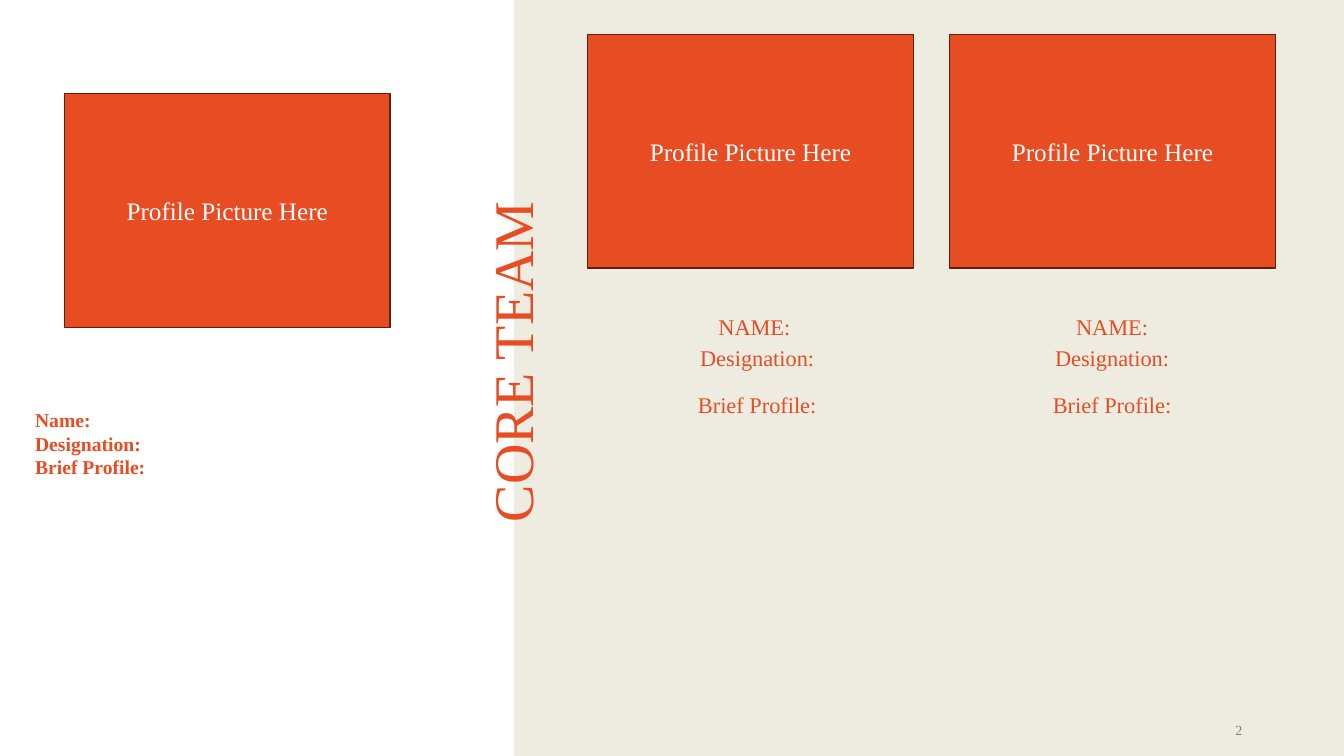
from dataclasses import dataclass

from pptx import Presentation
from pptx.dml.color import RGBColor as Rgb
from pptx.enum.shapes import MSO_SHAPE as Kind
from pptx.enum.text import MSO_ANCHOR as Anchor, PP_ALIGN as Align
from pptx.util import Pt

SCALE = 9144


@dataclass(frozen=True)
class Theme:
    font: str = "Times New Roman"
    accent: Rgb = Rgb(0xE8, 0x4C, 0x22)
    edge: Rgb = Rgb(0x61, 0x20, 0x0E)
    panel: Rgb = Rgb(0xEE, 0xEC, 0xE1)
    white: Rgb = Rgb(0xFF, 0xFF, 0xFF)
    gray: Rgb = Rgb(0x7F, 0x7F, 0x7F)
    title: int = 40
    photo: int = 18
    label: int = 16
    lead: int = 14
    number: int = 10


THEME = Theme()


def px(*sizes):
    return [size * SCALE for size in sizes]


def write(shape, lines, size, color, align=Align.CENTER,
          anchor=Anchor.MIDDLE, bold=False, space=1.0):
    frame = shape.text_frame
    frame.word_wrap = True
    frame.vertical_anchor = anchor
    frame.text = "\n".join(lines)
    for para in frame.paragraphs:
        para.alignment = align
        para.line_spacing = space
        para.font.name = THEME.font
        para.font.size = Pt(size)
        para.font.bold = bold
        para.font.color.rgb = color


def add_text(slide, box, lines, size, color, **style):
    shape = slide.shapes.add_textbox(*px(*box))
    write(shape, lines, size, color, **style)
    return shape


def add_rect(slide, box, fill, edge=None):
    shape = slide.shapes.add_shape(Kind.RECTANGLE, *px(*box))
    shape.shadow.inherit = False
    shape.fill.solid()
    shape.fill.fore_color.rgb = fill
    if edge is None:
        shape.line.fill.background()
    else:
        shape.line.color.rgb = edge
        shape.line.width = Pt(1)
    return shape


def add_photo(slide, left, top):
    shape = add_rect(slide, (left, top, 323, 232), THEME.accent, THEME.edge)
    write(shape, ["Profile Picture Here"], THEME.photo, THEME.white)


def add_title(slide, box):
    shape = add_text(slide, box, ["CORE TEAM"], THEME.title, THEME.accent,
                     space=0.8)
    shape.rotation = 270


def add_lead(slide, left, top):
    add_photo(slide, left + 39, top)
    add_text(slide, (left, top + 307, 430, 81),
             ["Name:", "Designation:", "Brief Profile:"],
             THEME.lead, THEME.accent, align=Align.LEFT,
             anchor=Anchor.TOP, bold=True)


def add_member(slide, left, top, inset, name):
    add_photo(slide, left, top)
    rows = [
        (264, 45, name, Anchor.BOTTOM),
        (305, 48, "Designation:", Anchor.TOP),
        (352, 48, "Brief Profile:", Anchor.TOP),
    ]
    for drop, height, label, anchor in rows:
        add_text(slide, (left + inset, top + drop, 272, height), [label],
                 THEME.label, THEME.accent, anchor=anchor, space=0.9)


def add_team(slide):
    add_rect(slide, (510, 0, 823, 750), THEME.panel)
    add_title(slide, (245, 300, 537, 118))
    add_lead(slide, 25, 93)
    add_member(slide, 583, 34, 32, "NAME: ")
    add_member(slide, 942, 34, 25, "NAME:")
    add_text(slide, (942, 713, 300, 22), ["2"], THEME.number, THEME.gray,
             align=Align.RIGHT)


def main():
    deck = Presentation()
    deck.slide_width, deck.slide_height = px(1333, 750)
    add_team(deck.slides.add_slide(deck.slide_layouts[6]))
    deck.save("out.pptx")


if __name__ == "__main__":
    main()
